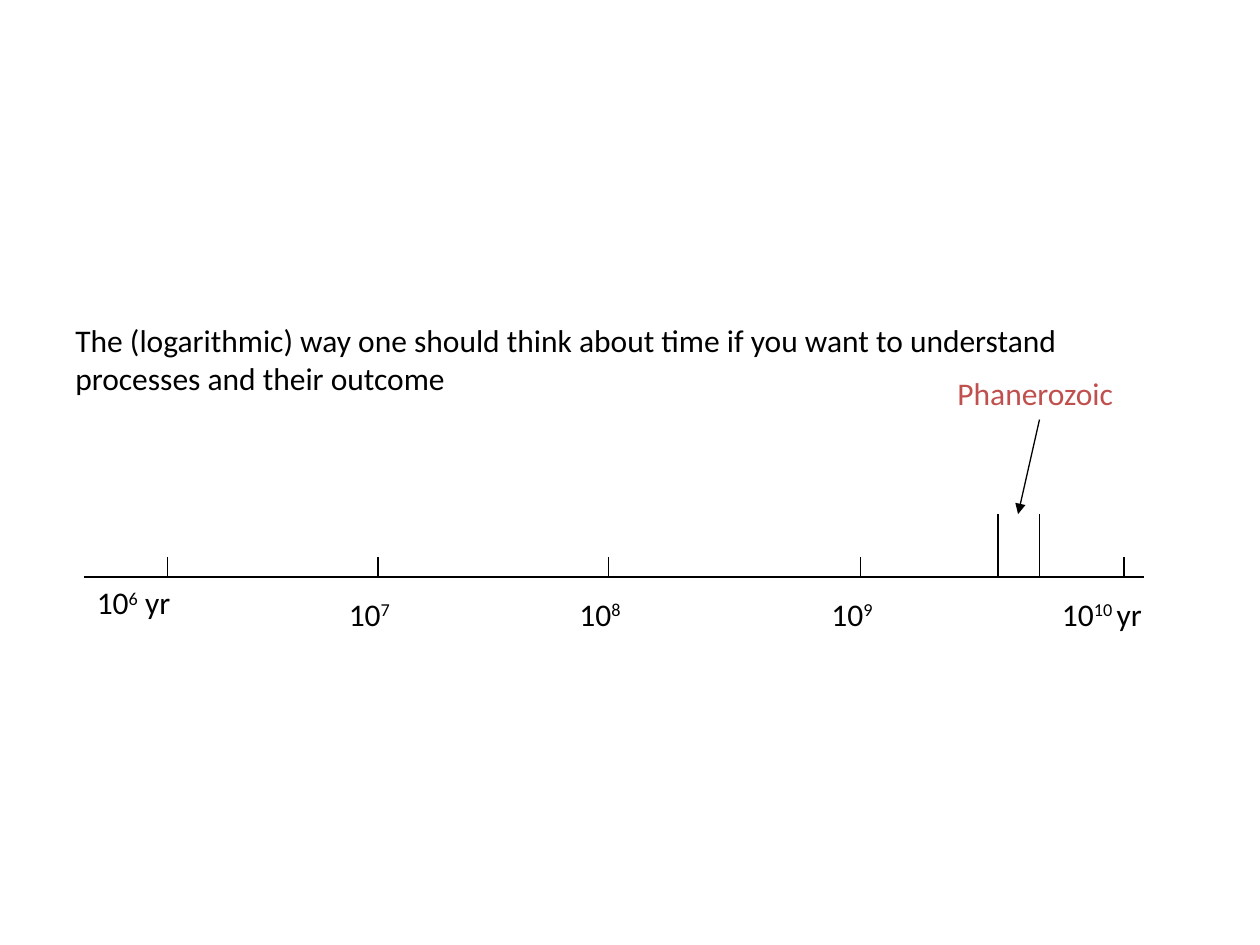
import pptx
import pptx.util
import pptx.dml.color
import pptx.enum.shapes
import pptx.enum.text
import pptx.oxml
import pptx.oxml.ns

Inches = pptx.util.Inches
COLORS = {"ink": "000000", "accent": "C0504D"}


def color(name):
    return pptx.dml.color.RGBColor.from_string(COLORS[name])


class Page:
    """Holds the text and line style and the current slide."""
    font = {"name": "Calibri", "size": pptx.util.Pt(18)}
    frame = {"word_wrap": True,
             "auto_size": pptx.enum.text.MSO_AUTO_SIZE.SHAPE_TO_FIT_TEXT}
    width = pptx.util.Pt(0.75)

    def __init__(self, slide):
        self.slide = slide

    def text(self, box, parts, tint="ink"):
        """Write text parts; every second part is a superscript."""
        shape = self.slide.shapes.add_textbox(*map(Inches, box))
        for key, value in self.frame.items():
            setattr(shape.text_frame, key, value)
        para = shape.text_frame.paragraphs[0]
        for index, part in enumerate(parts):
            run = para.add_run()
            run.text = part
            for key, value in self.font.items():
                setattr(run.font, key, value)
            run.font.color.rgb = color(tint)
            if index % 2:
                run._r.get_or_add_rPr().set("baseline", "30000")

    def line(self, start, end, arrow=False):
        line = self.slide.shapes.add_connector(
            pptx.enum.shapes.MSO_CONNECTOR.STRAIGHT,
            *map(Inches, start + end))
        line.line.color.rgb = color("ink")
        line.line.width = self.width
        props = line._element.spPr
        if arrow:
            props.ln.append(pptx.oxml.parse_xml(
                f'<a:tailEnd {pptx.oxml.ns.nsdecls("a")} type="triangle"/>'))
        props.append(pptx.oxml.parse_xml(
            f'<a:effectLst {pptx.oxml.ns.nsdecls("a")}/>'))


def main():
    deck = pptx.Presentation()
    deck.slide_width, deck.slide_height = Inches(10), Inches(7.5)
    page = Page(deck.slides.add_slide(deck.slide_layouts[6]))

    # Heading
    page.text((0.5, 2.5, 8.5, 0.9),
              ["The (logarithmic) way one should think about time if you "
               "want to understand processes and their outcome"])

    # Time axis with a tick for each power of ten
    axis = 4.58
    page.line((0.67, axis), (9.08, axis))
    for x in (1.33, 3, 4.83, 6.83, 8.92):
        page.line((x, 4.42), (x, axis))

    # Tick labels: left, top, width, parts
    labels = [
        (0.67, axis, 1.17, ["10", "6", " yr"]),
        (2.67, 4.67, 0.67, ["10", "7"]),
        (4.5, 4.67, 0.92, ["10", "8"]),
        (6.5, 4.67, 0.75, ["10", "9"]),
        (8.33, 4.67, 1.17, ["10", "10 ", "yr"]),
    ]
    for left, top, width, parts in labels:
        page.text((left, top, width, 0.5), parts)

    # Phanerozoic span, arrow and name
    span = 4.08
    for x in (8.25, 7.92):
        page.line((x, span), (x, axis))
    page.line((8.25, 3.33), (8.08, span), arrow=True)
    page.text((7.5, 2.92, 1.92, 0.5), ["Phanerozoic"], "accent")

    deck.save("out.pptx")


if __name__ == "__main__":
    main()
